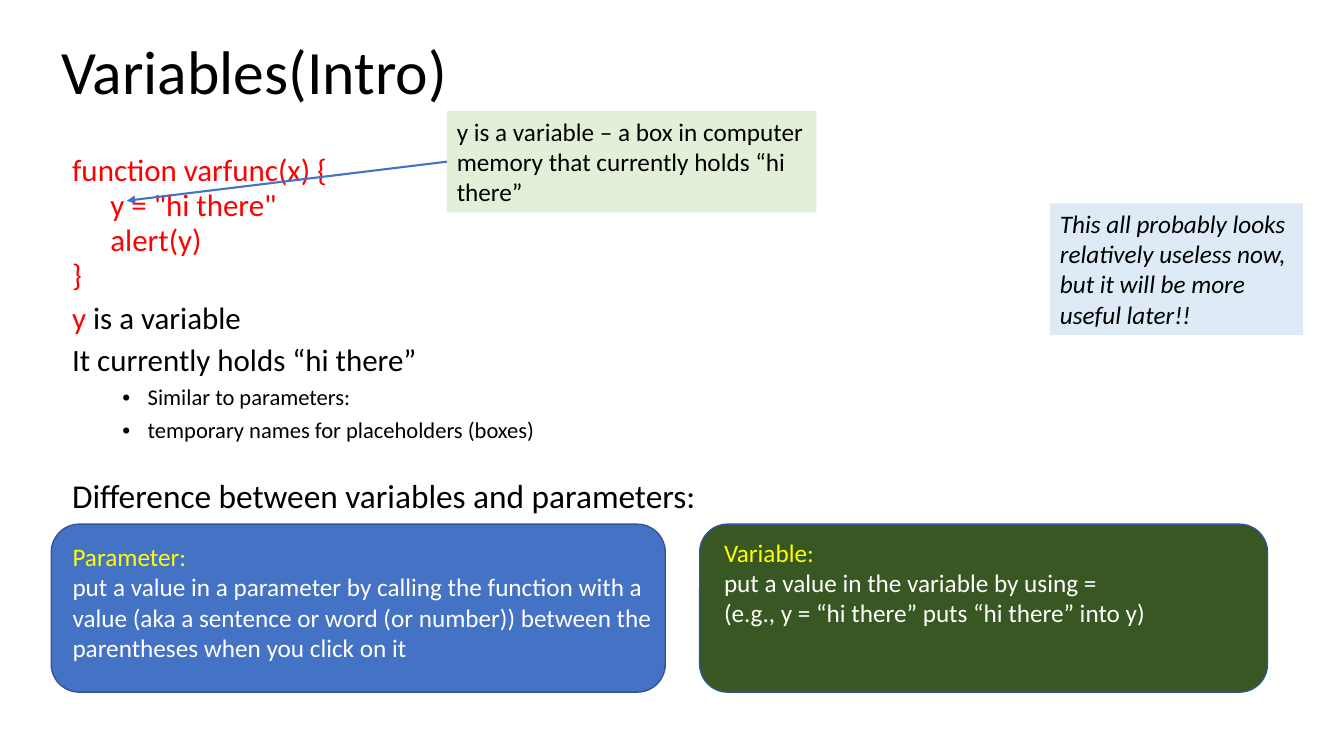
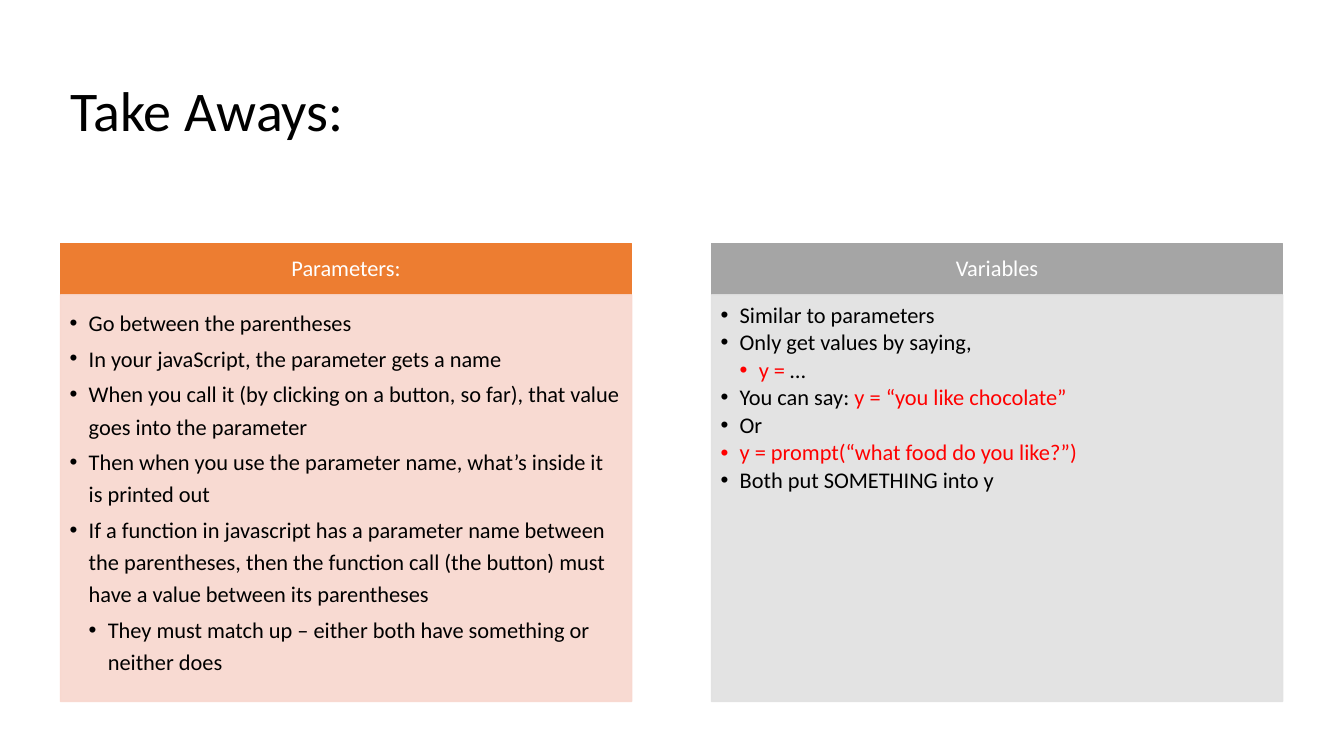
from pptx import Presentation
from pptx import util as u
from pptx.dml.color import RGBColor
from pptx.enum import shapes, text
from pptx.oxml.ns import qn
from lxml import etree

BLACK, WHITE, RED, YELLOW = "000000", "FFFFFF", "FF0000", "FFFF00"
BLUE, OUTLINE = "4472C4", "325491"
FONT = "Calibri"
rgb = RGBColor.from_string

deck = Presentation()
deck.slide_width, deck.slide_height = u.Inches(13.33), u.Inches(7.5)
COL, ROW = deck.slide_width / 160, deck.slide_height / 90  # square grid cells


def write(frame, lines, size, spacing=1.0, italic=False,
          anchor=text.MSO_ANCHOR.TOP, align=text.PP_ALIGN.LEFT):
    """Fill a frame; each line is (style, run, ...), each run (words, colour)."""
    frame.word_wrap = True
    frame.vertical_anchor = anchor
    for number, (style, *runs) in enumerate(lines):
        para = frame.add_paragraph() if number else frame.paragraphs[0]
        para.alignment = align
        para.line_spacing = style.get("spacing", spacing)
        para.space_before = u.Pt(style.get("before", 0))
        para.space_after = u.Pt(style.get("after", 0))
        props = para._p.get_or_add_pPr()
        props.set("marL", str(u.Inches(style.get("left", 0))))
        props.set("indent", str(-u.Inches(style.get("hang", 0))))
        if "hang" in style:
            etree.SubElement(props, qn("a:buFont")).set("typeface", "Arial")
            etree.SubElement(props, qn("a:buChar")).set("char", "•")
        for words, colour in runs:
            run = para.add_run()
            run.text = words
            run.font.name, run.font.size = FONT, u.Pt(style.get("size", size))
            run.font.color.rgb = rgb(colour)
            run.font.italic = italic


def add_panel(slide, left, top, width, height, fill, line=None,
              kind=shapes.MSO_SHAPE.RECTANGLE, insets=(0.1, 0.05, 0.1, 0.05)):
    """Place a flat shape by grid cells; insets are left, top, right, bottom."""
    panel = slide.shapes.add_shape(kind, int(left * COL), int(top * ROW),
                                   int(width * COL), int(height * ROW))
    panel.shadow.inherit = False
    panel.fill.solid()
    panel.fill.fore_color.rgb = rgb(fill)
    if line:
        panel.line.color.rgb = rgb(line)
        panel.line.width = u.Pt(1)
    else:
        panel.line.fill.background()
    frame = panel.text_frame
    (frame.margin_left, frame.margin_top,
     frame.margin_right, frame.margin_bottom) = map(u.Inches, insets)
    return panel


# Both slides with their titles
slides = []
for heading, size, left, top, width in (("Variables(Intro)", 44, 6.1, 0.2, 138),
                                        ("Take Aways:", 40, 7.2, 4.8, 145.6)):
    slide = deck.slides.add_slide(deck.slide_layouts[5])
    title = slide.shapes.title
    title.left, title.top = int(left * COL), int(top * ROW)
    title.width, title.height = int(width * COL), int(17.4 * ROW)
    write(title.text_frame, [({}, (heading, BLACK))], size, 0.9,
          anchor=text.MSO_ANCHOR.MIDDLE)
    slides.append(slide)
intro, take_aways = slides

# Intro: code and explanation
explanation = intro.shapes.add_textbox(int(7.4 * COL), int(17.6 * ROW),
                                       int(141.5 * COL), int(47.4 * ROW))
code, spaced = {"left": 0.38}, {"after": 5}
point = {"left": 0.75, "hang": 0.25, "size": 16.1, "after": 5}
write(explanation.text_frame, [
    ({}, ("function varfunc(x) {", RED)),
    (code, ('y = "hi there"', RED)),
    (code, ("alert(y)", RED)),
    (spaced, ("}", RED)),
    (spaced, ("y", RED), (" is a variable", BLACK)),
    (spaced, ("It currently holds “hi there”", BLACK)),
    (point, ("Similar to parameters:", BLACK)),
    (point, ("temporary names for placeholders (boxes)", BLACK)),
    ({"size": 23.8, "spacing": 0.7, "before": 25},
     ("Difference between variables and parameters:", BLACK)),
], 22.1, 0.95)

# Intro: two notes, the first pointing at the assignment
definition = add_panel(intro, 53.2, 13.2, 44, 12.1, "E2F0D9")
write(definition.text_frame, [({}, (
    "y is a variable – a box in computer memory that currently holds “hi there”",
    BLACK))], 18)
remark = add_panel(intro, 125, 24.2, 30.1, 15.7, "DEEBF7")
write(remark.text_frame, [({}, (
    "This all probably looks relatively useless now, but it will be more useful later!!",
    BLACK))], 18, italic=True)

pointer = intro.shapes.add_connector(shapes.MSO_CONNECTOR.STRAIGHT, 0, 0,
                                     int(15.1 * COL), int(23.9 * ROW))
pointer.begin_connect(definition, 1)
pointer.line.color.rgb = rgb(BLUE)
pointer.line.width = u.Pt(1.5)
etree.SubElement(pointer.line._get_or_add_ln(), qn("a:tailEnd")).set("type", "triangle")
etree.SubElement(pointer._element.spPr, qn("a:effectLst"))

# Intro: the two cards being compared
for left, width, fill, insets, term, sentences in (
    (6.1, 73.1, BLUE, (0.13, 0.09, 0.04, 0), "Parameter:",
     ["put a value in a parameter by calling the function with a value (aka a sentence "
      "or word (or number)) between the parentheses when you click on it"]),
    (83.3, 67.6, "385723", (0.16, 0.05, 0.1, 0), "Variable:",
     ["put a value in the variable by using =",
      "(e.g., y = “hi there” puts “hi there” into y)"]),
):
    card = add_panel(intro, left, 62.4, width, 20, fill, OUTLINE,
                     shapes.MSO_SHAPE.ROUNDED_RECTANGLE, insets)
    write(card.text_frame, [({}, (term, YELLOW))]
          + [({}, (sentence, WHITE)) for sentence in sentences], 18)

# Take aways: two headed lists
item = {"left": 0.19, "hang": 0.19, "after": 2.4}
subitem = {**item, "left": 0.38}
topics = (
    ("Parameters:", "ED7D31", "F8D7CE", 1.2, [
        (item, ("Go between the parentheses", BLACK)),
        (item, ("In your javaScript, the parameter gets a name", BLACK)),
        (item, ("When you call it (by clicking on a button, so far), that value goes "
                "into the parameter", BLACK)),
        (item, ("Then when you use the parameter name, what’s inside it is printed out",
                BLACK)),
        (item, ("If a function in javascript has a parameter name between the "
                "parentheses, then the function call (the button) must have a value "
                "between its parentheses", BLACK)),
        (subitem, ("They must match up – either both have something or neither does",
                   BLACK)),
    ]),
    ("Variables", "A5A5A5", "E1E1E1", 0.9, [
        (item, ("Similar to parameters", BLACK)),
        (item, ("Only get values by saying,", BLACK)),
        (subitem, ("y = ", RED), ("…", BLACK)),
        (item, ("You can say: ", BLACK), ("y = “you like chocolate”", RED)),
        (item, ("Or", BLACK)),
        (item, ("y = prompt(“what food do you like?”)", RED)),
        (item, ("Both put SOMETHING into y", BLACK)),
    ]),
)
for index, (topic, strong, pale, spacing, facts) in enumerate(topics):
    left = 7.2 + 77.5 * index
    header = add_panel(take_aways, left, 29, 68, 6.1, strong, strong,
                       insets=(0.12, 0.07, 0.12, 0.07))
    write(header.text_frame, [({}, (topic, WHITE))], 16, 0.9,
          anchor=text.MSO_ANCHOR.MIDDLE, align=text.PP_ALIGN.CENTER)
    listing = add_panel(take_aways, left, 35.1, 68, 48.4, pale, pale,
                        insets=(0.09, 0.09, 0.12, 0.14))
    for colour in listing._element.spPr.iter(qn("a:srgbClr")):
        etree.SubElement(colour, qn("a:alpha")).set("val", "90000")
    write(listing.text_frame, facts, 16, spacing)

deck.save("out.pptx")
